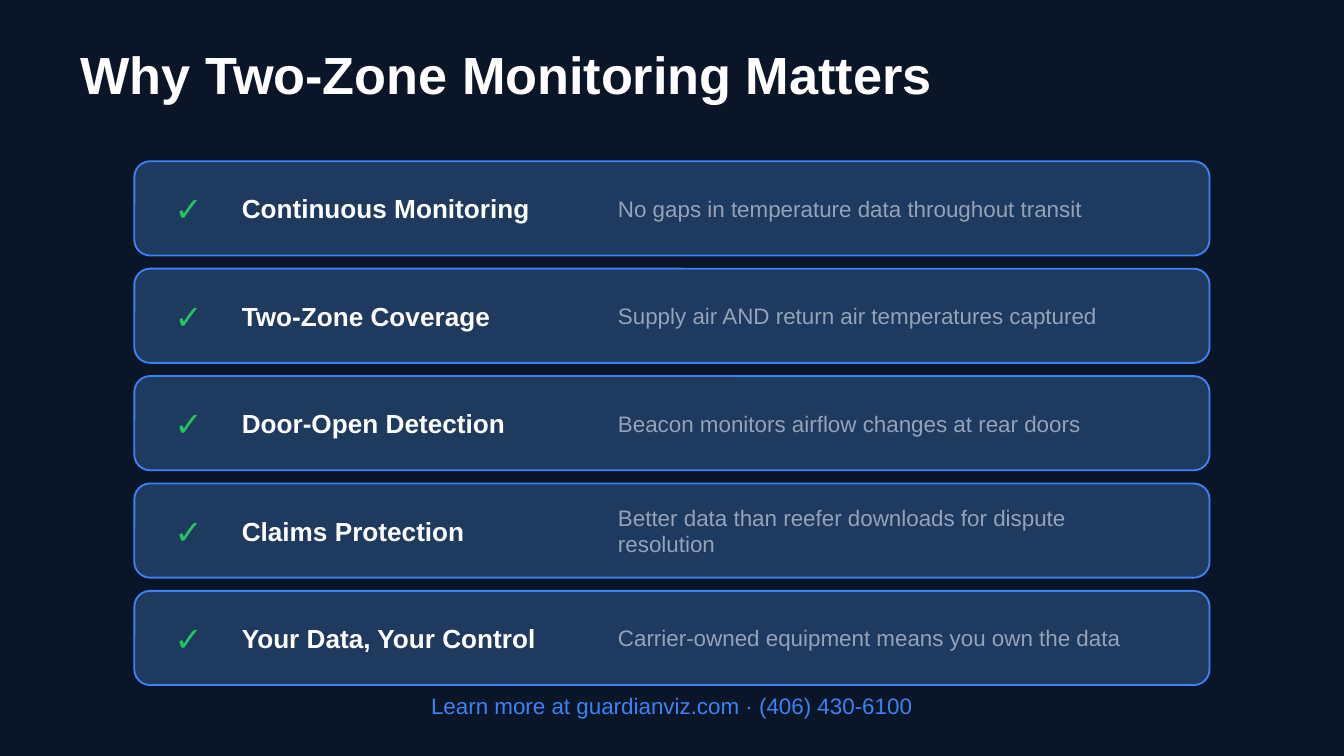
from dataclasses import dataclass

from pptx import Presentation
from pptx.dml.color import RGBColor
from pptx.enum.shapes import MSO_SHAPE
from pptx.enum.text import MSO_ANCHOR, PP_ALIGN
from pptx.util import Cm, Pt


@dataclass(frozen=True)
class Theme:
    font: str = "Arial"
    back: str = "0A1628"
    card: str = "1E3A5F"
    accent: str = "3B82F6"
    white: str = "FFFFFF"
    green: str = "22C55E"
    muted: str = "94A3B8"
    title: int = 28
    mark: int = 18
    head: int = 14
    body: int = 12
    edge: int = 1


class Deck:
    def __init__(self, slide, theme):
        self.slide = slide
        self.theme = theme

    def paint(self, fill, color):
        fill.solid()
        fill.fore_color.rgb = RGBColor.from_string(color)

    def back(self):
        self.paint(self.slide.background.fill, self.theme.back)

    def card(self, *box):
        shape = self.slide.shapes.add_shape(
            MSO_SHAPE.ROUNDED_RECTANGLE, *map(Cm, box))
        shape.shadow.inherit = False
        self.paint(shape.fill, self.theme.card)
        self.paint(shape.line.fill, self.theme.accent)
        shape.line.width = Pt(self.theme.edge)

    def text(self, words, box, size, color, bold=False, align=PP_ALIGN.LEFT):
        frame = self.slide.shapes.add_textbox(*map(Cm, box)).text_frame
        frame.word_wrap = True
        frame.vertical_anchor = MSO_ANCHOR.MIDDLE
        para = frame.paragraphs[0]
        para.text = words
        para.alignment = align
        font = para.font
        font.name = self.theme.font
        font.size = Pt(size)
        font.bold = bold
        font.color.rgb = RGBColor.from_string(color)

    def row(self, top, head, body):
        """Draw one benefit card: check mark, heading and detail."""
        t = self.theme
        high = 1.78
        self.card(2.54, top, 20.32, high)
        self.text("✓", (3.05, top, 1.27, high), t.mark, t.green)
        self.text(head, (4.32, top, 7.11, high), t.head, t.white, bold=True)
        self.text(body, (11.43, top, 10.92, high), t.body, t.muted)


ROWS = [
    ("Continuous Monitoring",
     "No gaps in temperature data throughout transit"),
    ("Two-Zone Coverage",
     "Supply air AND return air temperatures captured"),
    ("Door-Open Detection",
     "Beacon monitors airflow changes at rear doors"),
    ("Claims Protection",
     "Better data than reefer downloads for dispute resolution"),
    ("Your Data, Your Control",
     "Carrier-owned equipment means you own the data"),
]


def main():
    show = Presentation()
    show.slide_width, show.slide_height = Cm(25.4), Cm(14.29)
    theme = Theme()
    deck = Deck(show.slides.add_slide(show.slide_layouts[6]), theme)

    deck.back()
    deck.text("Why Two-Zone Monitoring Matters", (1.27, 0.76, 22.86, 1.27),
              theme.title, theme.white, bold=True)
    first, step = 3.05, 2.03
    for i, (head, body) in enumerate(ROWS):
        deck.row(first + i * step, head, body)
    deck.text("Learn more at guardianviz.com · (406) 430-6100",
              (1.27, 12.95, 22.86, 0.76), theme.body, theme.accent,
              align=PP_ALIGN.CENTER)

    show.save("out.pptx")


if __name__ == "__main__":
    main()
